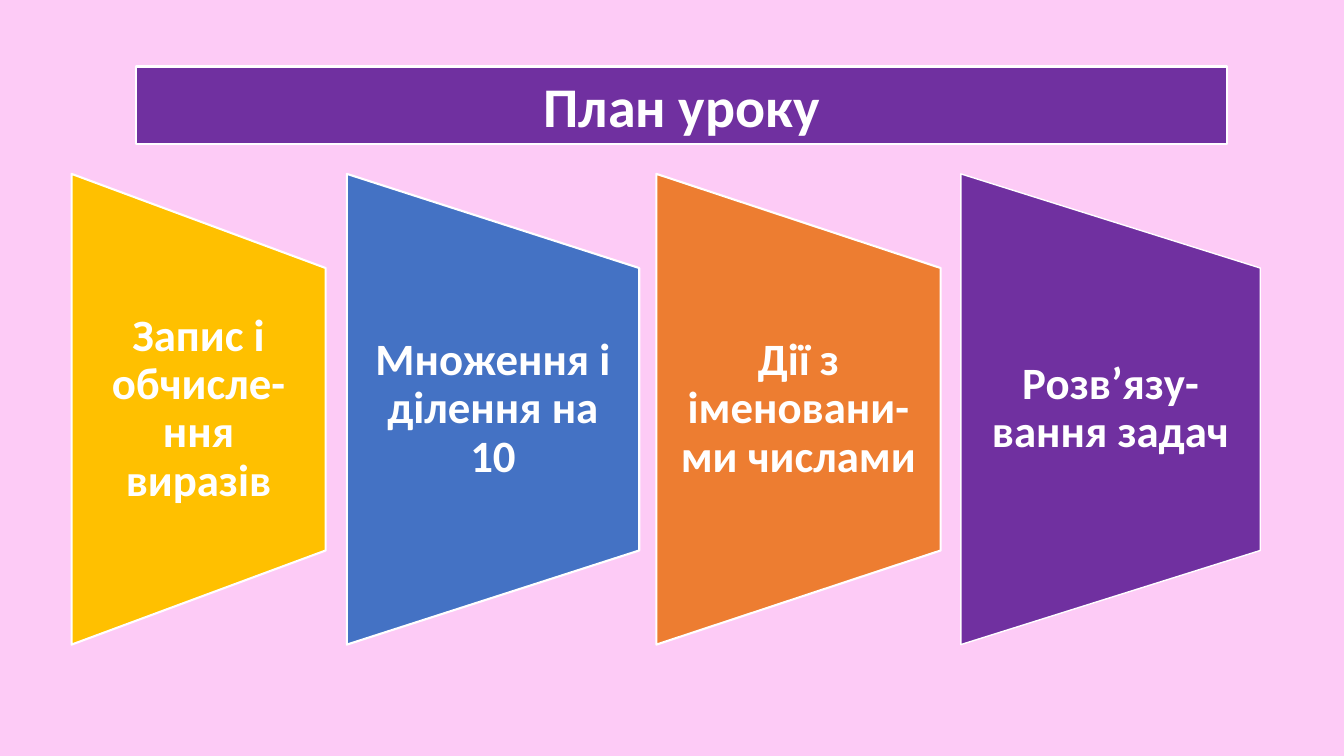
"""Build the lesson plan slide: a title bar above four trapezoid steps."""
from pptx import Presentation
from pptx.dml.color import RGBColor
from pptx.enum import shapes, text
from pptx.util import Inches, Pt

WHITE, PURPLE = "FFFFFF", "7030A0"
STEP_HEIGHT, STEP_MIDDLE = 4.67, 4.06
STEPS = [
    ("Запис і обчисле-ння виразів", 0.71, 2.52, "FFC000", 1.5),
    ("Множення і ділення на 10", 3.44, 2.9, "4472C4", 1.5),
    ("Дії з іменовани-ми числами", 6.51, 2.82, "ED7D31", 1.5),
    ("Розв’язу-вання задач", 9.53, 2.97, PURPLE, 1),
]


def paint(shape, fill, line_width):
    shape.fill.solid()
    shape.fill.fore_color.rgb = RGBColor.from_string(fill)
    shape.line.color.rgb = RGBColor.from_string(WHITE)
    shape.line.width = Pt(line_width)


def write(frame, words, size):
    frame.word_wrap = True
    frame.auto_size = text.MSO_AUTO_SIZE.NONE
    frame.vertical_anchor = text.MSO_ANCHOR.MIDDLE
    para = frame.paragraphs[0]
    para.text = words
    para.alignment = text.PP_ALIGN.CENTER
    para.font.name = "Calibri"
    para.font.size = Pt(size)
    para.font.bold = True
    para.font.color.rgb = RGBColor.from_string(WHITE)
    return para


deck = Presentation()
deck.slide_width, deck.slide_height = Inches(13.33), Inches(7.5)
page = deck.slides.add_slide(deck.slide_layouts[5])
page.background.fill.solid()
page.background.fill.fore_color.rgb = RGBColor.from_string("FDCBF6")

title = page.shapes.title
title.left, title.top = Inches(1.35), Inches(0.66)
title.width, title.height = Inches(10.82), Inches(0.77)
paint(title, PURPLE, 1.5)
write(title.text_frame, "План уроку", 40)

for words, left, width, color, line_width in STEPS:
    step = page.shapes.add_shape(
        shapes.MSO_SHAPE.FLOWCHART_MANUAL_OPERATION,
        Inches(left + (width - STEP_HEIGHT) / 2), Inches(STEP_MIDDLE - width / 2),
        Inches(STEP_HEIGHT), Inches(width))
    step.rotation = 270
    step.shadow.inherit = False
    paint(step, color, line_width)

    box = page.shapes.add_textbox(
        Inches(left), Inches(STEP_MIDDLE - 1.4), Inches(width), Inches(2.8))
    frame = box.text_frame
    frame.margin_left = frame.margin_right = Inches(0.22)
    frame.margin_top = frame.margin_bottom = 0
    write(frame, words, 32).line_spacing = 0.9

deck.save("out.pptx")
